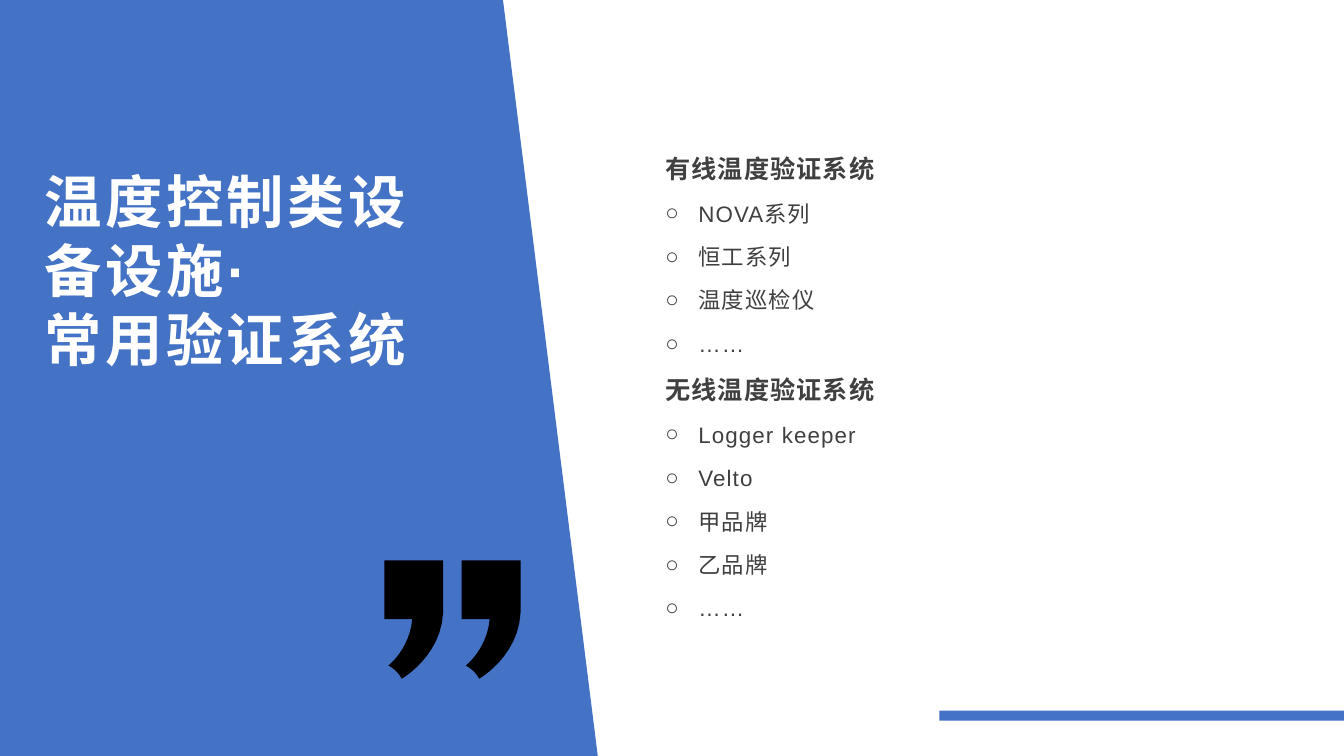
import pptx
import pptx.dml.color
import pptx.enum.shapes
import pptx.enum.text
import pptx.oxml
import pptx.oxml.ns
import pptx.util

Pt = pptx.util.Pt
ANCHOR = pptx.enum.text.MSO_ANCHOR
COLORS = {"blue": "4472C4", "white": "FFFFFF", "text": "404040", "black": "000000"}
FONT = "Arial"
TITLE = ["温度控制类设备设施·", "常用验证系统"]
SYSTEMS = {
    "有线温度验证系统": ["NOVA系列", "恒工系列", "温度巡检仪", "……"],
    "无线温度验证系统": ["Logger keeper", "Velto", "甲品牌", "乙品牌", "……"],
}


def rgb(name):
    return pptx.dml.color.RGBColor.from_string(COLORS[name])


def paint(shape, color):
    shape.shadow.inherit = False
    shape.fill.solid()
    shape.fill.fore_color.rgb = rgb(color)
    shape.line.fill.background()


def add_outline(shapes, points, color):
    corners = [(Pt(x), Pt(y)) for x, y in points]
    builder = shapes.build_freeform(*corners[0], scale=1.0)
    builder.add_line_segments(corners[1:], close=True)
    outline = builder.convert_to_shape()
    paint(outline, color)
    return outline


def curve(start, first, second, end, steps=12):
    """Points along a cubic Bezier, without its start."""
    points = []
    for step in range(1, steps + 1):
        t = step / steps
        weights = ((1 - t) ** 3, 3 * t * (1 - t) ** 2, 3 * t * t * (1 - t), t ** 3)
        points.append(tuple(
            sum(w * p[axis] for w, p in zip(weights, (start, first, second, end)))
            for axis in (0, 1)))
    return points


def quote_mark(left, top):
    tip, notch, shoulder = (12.5, 84.5), (3, 75), (20, 42)
    points = [tip, (11, 82)]
    points += curve(points[-1], (9.5, 80), (7, 77.5), (4.5, 76))
    points += [notch]
    points += curve(notch, notch, (18, 63.5), shoulder)
    points += [(0, 42), (0, 0), (42, 0), (42, 37.5)]
    points += curve(points[-1], (40.5, 68.5), tip, tip)[:-1]
    return [(left + x, top + y) for x, y in points]


def place(placeholder, left, top, width, height, anchor):
    placeholder.left, placeholder.top = Pt(left), Pt(top)
    placeholder.width, placeholder.height = Pt(width), Pt(height)
    frame = placeholder.text_frame
    frame.word_wrap = True
    frame.auto_size = pptx.enum.text.MSO_AUTO_SIZE.NONE
    frame.vertical_anchor = anchor
    return frame


def add_paragraph(frame, index):
    paragraph = frame.add_paragraph() if index else frame.paragraphs[0]
    paragraph.alignment = pptx.enum.text.PP_ALIGN.LEFT
    paragraph.space_before = Pt(0)
    return paragraph


def add_run(paragraph, text, size, color, bold, spacing):
    run = paragraph.add_run()
    run.text = text
    run.font.size = Pt(size)
    run.font.bold = bold
    run.font.name = FONT
    run.font.color.rgb = rgb(color)
    properties = run.font._element
    properties.set("spc", str(round(spacing * 100)))
    east_asian = pptx.oxml.parse_xml(
        f'<a:ea {pptx.oxml.ns.nsdecls("a")} typeface="{FONT}"/>')
    properties.find(pptx.oxml.ns.qn("a:latin")).addnext(east_asian)


def set_bullet(paragraph, margin, indent, bullet=None):
    properties = paragraph._p.get_or_add_pPr()
    properties.set("marL", str(Pt(margin)))
    properties.set("indent", str(Pt(indent)))
    tags = [f'buFont {{}} typeface="{FONT}"', f'buChar {{}} char="{bullet}"'] if bullet else ["buNone {}"]
    for tag in tags:
        namespace = pptx.oxml.ns.nsdecls("a")
        properties.append(pptx.oxml.parse_xml(f"<a:{tag.format(namespace)}/>"))


def fill_title(title):
    frame = place(title, 24.5, 104.4, 280.8, 165.6, ANCHOR.BOTTOM)
    for index, line in enumerate(TITLE):
        paragraph = add_paragraph(frame, index)
        paragraph.line_spacing = 1.0
        add_run(paragraph, line, 41, "white", True, 2.5)


def fill_systems(body):
    frame = place(body, 442, 63.4, 483, 422, ANCHOR.MIDDLE)
    lines = [(text, text == heading)
             for heading, items in SYSTEMS.items() for text in [heading, *items]]
    for index, (text, is_heading) in enumerate(lines):
        paragraph = add_paragraph(frame, index)
        paragraph.line_spacing = 1.2
        paragraph.space_after = Pt(8)
        if is_heading:
            set_bullet(paragraph, 26, 0)
        else:
            set_bullet(paragraph, 49.7, -23.7, "○")
        add_run(paragraph, text, 18 if is_heading else 16, "text", is_heading, 0.8)


def main():
    deck = pptx.Presentation()
    deck.slide_width, deck.slide_height = Pt(960), Pt(540)
    slide = deck.slides.add_slide(deck.slide_layouts[1])
    shapes = slide.shapes

    panel = add_outline(shapes, [(0, 0), (359.3, 0), (427, 540), (0, 540)], "blue")
    shapes.title._element.addprevious(panel._element)
    fill_title(shapes.title)
    fill_systems(slide.placeholders[1])

    accent_bar = shapes.add_shape(
        pptx.enum.shapes.MSO_SHAPE.RECTANGLE, Pt(671), Pt(507.6), Pt(289), Pt(7.2))
    paint(accent_bar, "blue")

    quotes = shapes.add_group_shape()
    for left in (329.8, 274.5):
        add_outline(quotes.shapes, quote_mark(left, 400.3), "black")

    deck.save("out.pptx")


if __name__ == "__main__":
    main()
